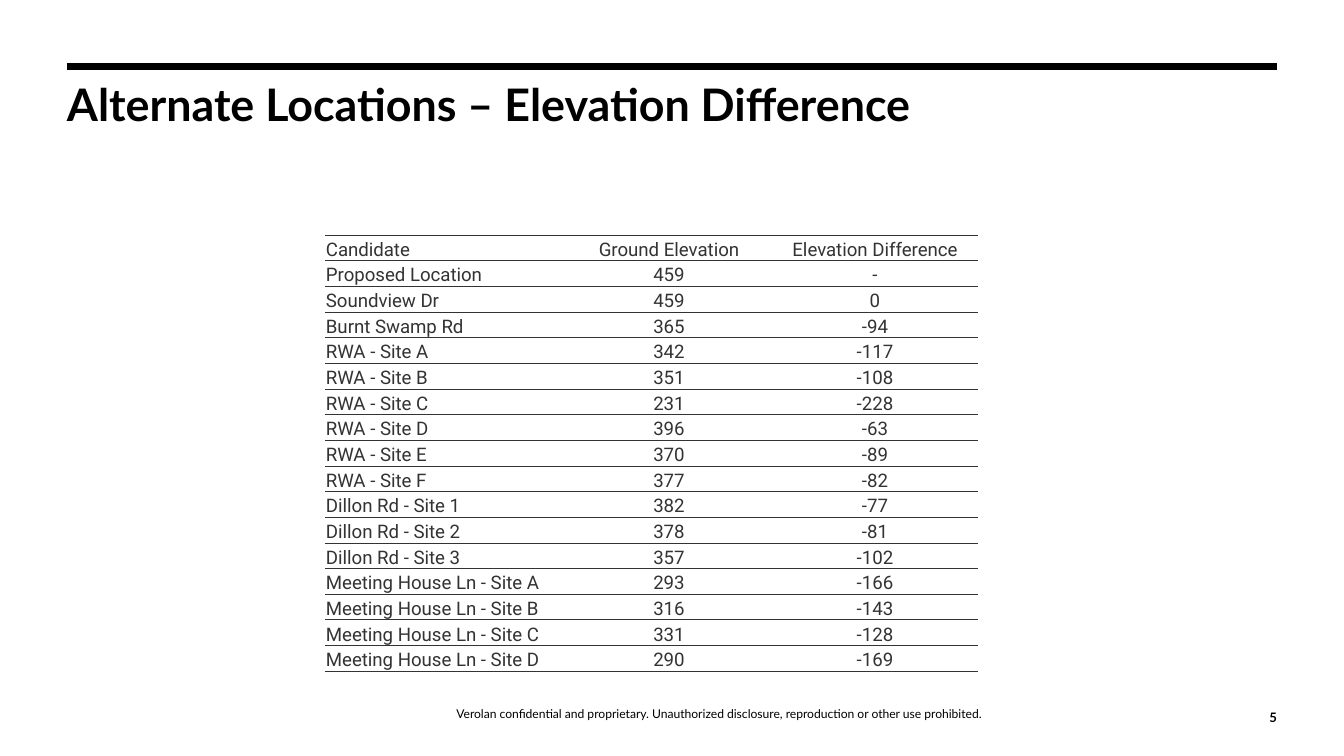
from lxml import etree
from pptx import Presentation
from pptx import util as u
from pptx.dml.color import RGBColor
from pptx.enum import shapes, text
from pptx.oxml import ns

SCALE = 914400 / 134.4  # EMU in one px
BLACK = RGBColor(0x00, 0x00, 0x00)
GREY = RGBColor(0x33, 0x33, 0x33)
LEFT, CENTER, RIGHT = (text.PP_ALIGN.LEFT, text.PP_ALIGN.CENTER,
                       text.PP_ALIGN.RIGHT)

HEADS = ("Candidate", "Ground Elevation", "Elevation Difference")
BASE = 459  # elevation of the proposed location
SITES = (
    ("Soundview Dr", 459),
    ("Burnt Swamp Rd", 365),
    ("RWA - Site A", 342),
    ("RWA - Site B", 351),
    ("RWA - Site C", 231),
    ("RWA - Site D", 396),
    ("RWA - Site E", 370),
    ("RWA - Site F", 377),
    ("Dillon Rd - Site 1", 382),
    ("Dillon Rd - Site 2", 378),
    ("Dillon Rd - Site 3", 357),
    ("Meeting House Ln - Site A", 293),
    ("Meeting House Ln - Site B", 316),
    ("Meeting House Ln - Site C", 331),
    ("Meeting House Ln - Site D", 290),
)
WIDTHS = (241, 206, 206)


def px(n):
    return u.Emu(round(n * SCALE))


def write(frame, words, size, font="Lato", color=BLACK, bold=False,
          align=LEFT, space=None):
    """Put one formatted paragraph into a text frame."""
    para = frame.paragraphs[0]
    para.alignment = align
    if space:
        para.line_spacing = space
    run = para.add_run()
    run.text = words
    run.font.name, run.font.size = font, u.Pt(size)
    run.font.bold = bold
    run.font.color.rgb = color


def place(shape, x, y, w, h, anchor):
    """Move a text shape and clear its insets."""
    shape.left, shape.top, shape.width, shape.height = map(px, (x, y, w, h))
    frame = shape.text_frame
    frame.margin_left = frame.margin_right = 0
    frame.margin_top = frame.margin_bottom = 0
    frame.word_wrap = True
    frame.auto_size = text.MSO_AUTO_SIZE.NONE
    frame.vertical_anchor = anchor
    return frame


def add_text(slide, box, words, **form):
    shape = slide.shapes.add_textbox(0, 0, 0, 0)
    write(place(shape, *box, text.MSO_ANCHOR.BOTTOM), words, **form)


def add_rule(slide, x, y, end, width):
    line = slide.shapes.add_connector(
        shapes.MSO_CONNECTOR.STRAIGHT, px(x), px(y), px(end), px(y))
    line.line.color.rgb = BLACK
    line.line.width = u.Pt(width)
    etree.SubElement(line._element.spPr, ns.qn("a:effectLst"))


def set_edges(cell):
    """Draw thin lines above and below a cell, none at its sides."""
    props = cell._tc.get_or_add_tcPr()
    for i, side in enumerate(("lnL", "lnR", "lnT", "lnB")):
        edge = etree.Element(ns.qn("a:" + side), w=str(u.Pt(0.5)))
        if side in ("lnT", "lnB"):
            fill = etree.SubElement(edge, ns.qn("a:solidFill"))
            etree.SubElement(fill, ns.qn("a:srgbClr"), val=str(GREY))
        else:
            etree.SubElement(edge, ns.qn("a:noFill"))
        props.insert(i, edge)


def fill_cell(cell, words, align):
    cell.margin_left = cell.margin_right = cell.margin_top = px(1)
    cell.margin_bottom = 0
    cell.vertical_anchor = text.MSO_ANCHOR.BOTTOM
    cell.fill.background()
    set_edges(cell)
    write(cell.text_frame, words, size=10, font="Roboto", color=GREY,
          align=align)


def add_grid(slide, x, y, h, rows):
    table = slide.shapes.add_table(
        len(rows), len(WIDTHS), px(x), px(y), px(sum(WIDTHS)), px(h)).table
    table.first_row = table.horz_banding = False
    for col, width in zip(table.columns, WIDTHS):
        col.width = px(width)
    for r, row in enumerate(rows):
        for c, words in enumerate(row):
            fill_cell(table.cell(r, c), words, CENTER if c else LEFT)


def main():
    deck = Presentation()
    deck.slide_width, deck.slide_height = px(1344), px(756)
    slide = deck.slides.add_slide(deck.slide_layouts[5])

    # Rule and title
    add_rule(slide, 67, 67, 1277, 3.75)
    frame = place(slide.shapes.title, 67, 87, 1042, 101, text.MSO_ANCHOR.TOP)
    write(frame, "Alternate Locations – Elevation Difference", size=24,
          bold=True, space=0.8)

    # Elevation table
    rows = [HEADS, ("Proposed Location", str(BASE), "-")]
    rows += [(name, str(high), str(high - BASE)) for name, high in SITES]
    add_grid(slide, 325, 235, 437, rows)

    # Footer and page number
    add_text(slide, (196, 677, 1047, 44),
             "Verolan confidential and proprietary. Unauthorized disclosure, "
             "reproduction or other use prohibited.",
             size=6.5, align=CENTER, space=u.Pt(7.4))
    add_text(slide, (1243, 691, 34, 34), "5", size=7, bold=True, align=RIGHT)

    deck.save("out.pptx")


if __name__ == "__main__":
    main()
